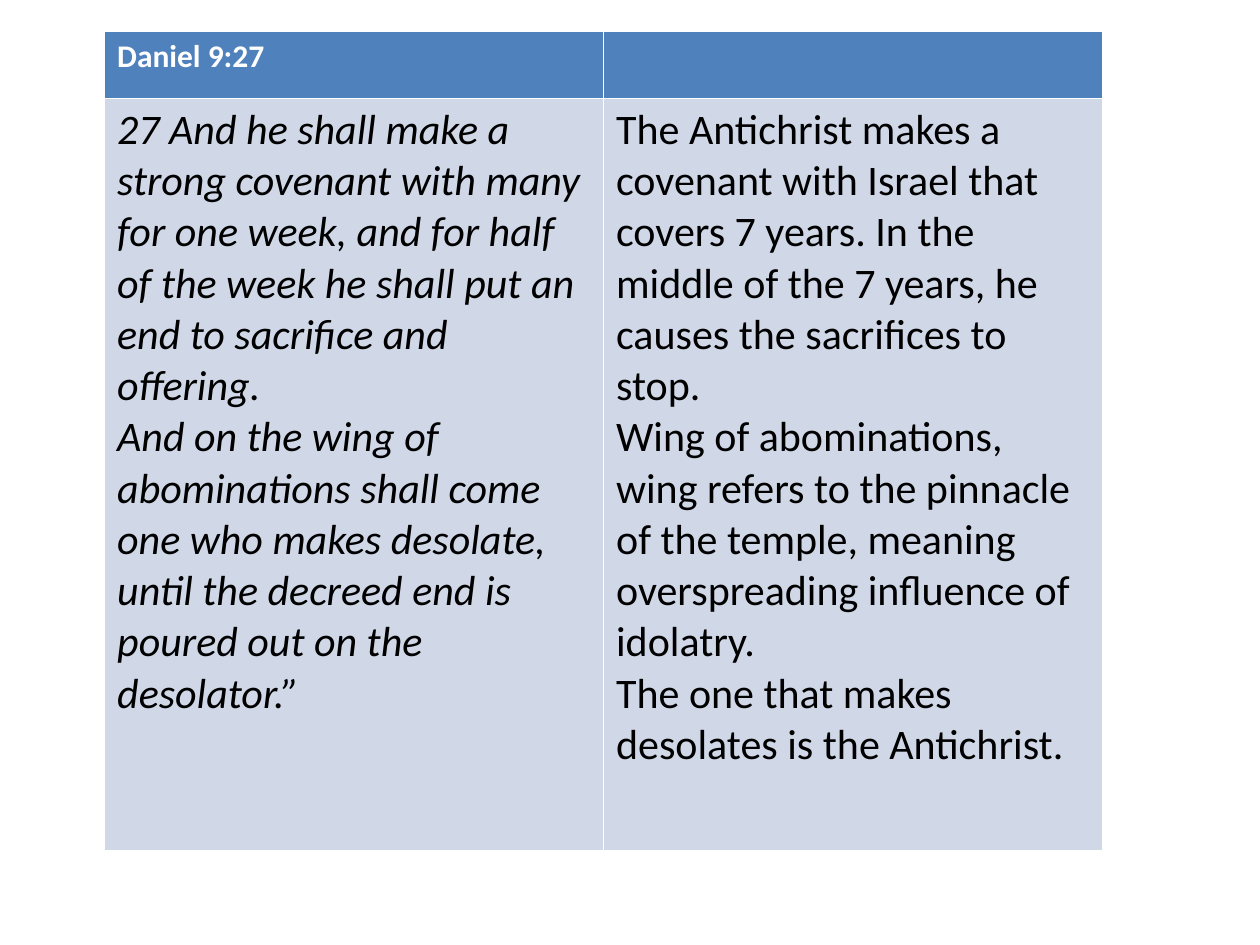
"""Build a slide with a two-column table on Daniel 9:27."""
from pptx import Presentation
from pptx.dml.color import RGBColor
from pptx.util import Inches, Pt

WHITE = RGBColor(0xFF, 0xFF, 0xFF)
BLACK = RGBColor(0, 0, 0)
BLUE = RGBColor(0x4F, 0x81, 0xBD)
PALE = RGBColor(0xD0, 0xD8, 0xE8)

VERSE = [
    "27 And he shall make a strong covenant with many for one week, and for half "
    "of the week he shall put an end to sacrifice and offering. ",
    "And on the wing of abominations shall come one who makes desolate, "
    "until the decreed end is poured out on the desolator.”",
]
NOTES = [
    "The Antichrist makes a covenant with Israel that covers 7 years. "
    "In the middle of the 7 years, he causes the sacrifices to stop.",
    "Wing of abominations, wing refers to the pinnacle of the temple, "
    "meaning overspreading influence of idolatry.",
    "The one that makes desolates is the Antichrist.",
]
HEAD = {"size": Pt(18), "bold": True, "italic": False}
BODY = {"size": Pt(24), "bold": False, "italic": False}
QUOTE = {**BODY, "italic": True}

ROWS = [
    (0.53, BLUE, WHITE, [(["Daniel 9:27"], HEAD), ([], HEAD)]),
    (5.97, PALE, BLACK, [(VERSE, QUOTE), (NOTES, BODY)]),
]
LEFT, TOP, WIDTH = 0.83, 0.25, 7.92


def write(cell, lines, style, color):
    frame = cell.text_frame
    for i, line in enumerate(lines):
        para = frame.add_paragraph() if i else frame.paragraphs[0]
        run = para.add_run()
        run.text = line
        run.font.color.rgb = color
        for name, value in {"name": "Calibri", **style}.items():
            setattr(run.font, name, value)


def main():
    deck = Presentation()
    deck.slide_width, deck.slide_height = Inches(10), Inches(7.5)
    slide = deck.slides.add_slide(deck.slide_layouts[6])
    high = sum(row[0] for row in ROWS)
    table = slide.shapes.add_table(
        len(ROWS), 2, Inches(LEFT), Inches(TOP), Inches(WIDTH), Inches(high)
    ).table
    for r, (tall, fill, color, cells) in enumerate(ROWS):
        table.rows[r].height = Inches(tall)
        for c, (lines, style) in enumerate(cells):
            cell = table.cell(r, c)
            cell.fill.solid()
            cell.fill.fore_color.rgb = fill
            write(cell, lines, style, color)
    deck.save("out.pptx")


if __name__ == "__main__":
    main()
